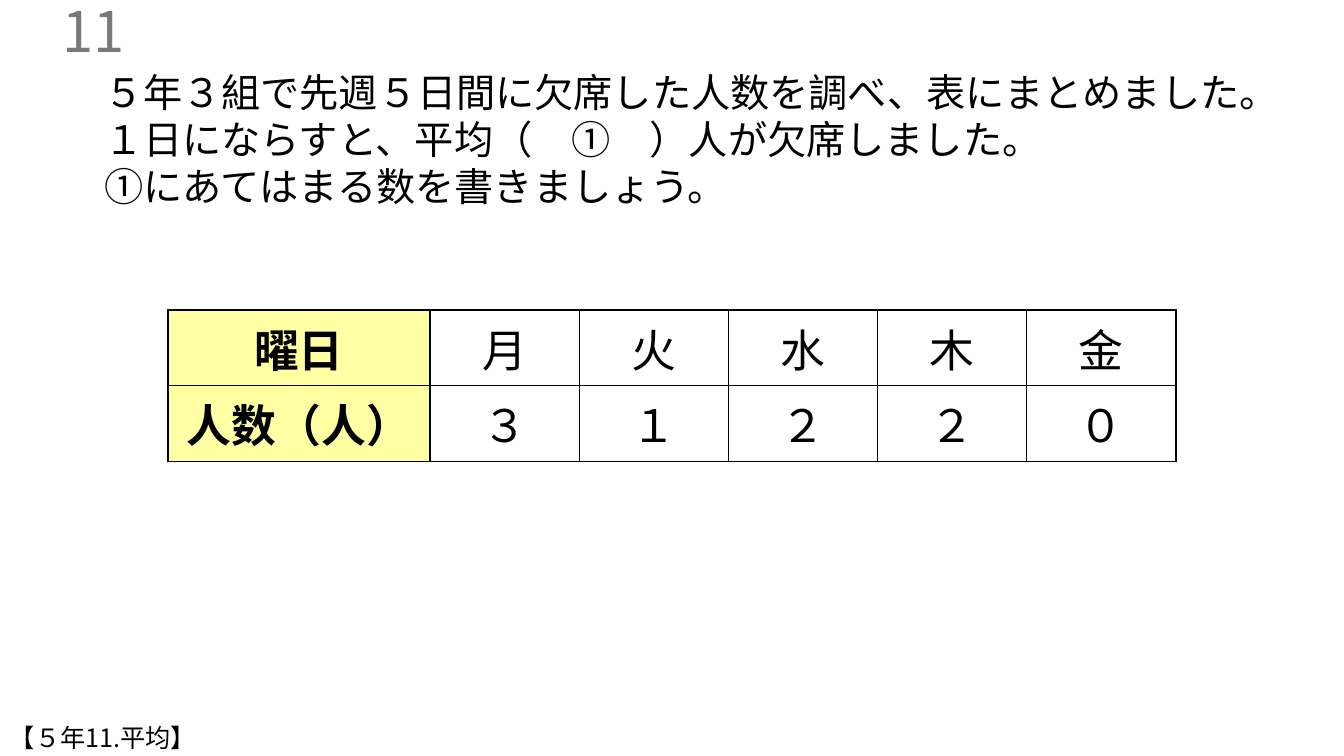
import dataclasses

import pptx
import pptx.dml.color
import pptx.enum.text
import pptx.oxml
import pptx.oxml.ns
import pptx.util

WIDTH, HEIGHT = pptx.util.Inches(13.33), pptx.util.Inches(7.5)
ALIGN = pptx.enum.text.PP_ALIGN
ANCHOR = pptx.enum.text.MSO_ANCHOR


@dataclasses.dataclass(frozen=True)
class Theme:
    font: str = "Noto Sans CJK JP"
    ink: str = "000000"
    number_ink: str = "797979"
    header_fill: str = "FFFFA3"
    cell_fill: str = "FFFFFF"
    number_size: int = 40
    table_size: int = 32
    question_size: int = 28
    footer_size: int = 18
    border: float = 1


THEME = Theme()
QUESTION = [
    "５年３組で先週５日間に欠席した人数を調べ、表にまとめました。",
    "１日にならすと、平均（　①　）人が欠席しました。",
    "①にあてはまる数を書きましょう。",
]
ABSENCES = [
    ["曜日", "月", "火", "水", "木", "金"],
    ["人数（人）", "３", "１", "２", "２", "０"],
]


def rgb(value):
    return pptx.dml.color.RGBColor.from_string(value)


def share(left, top, width, height):
    """Turn shares of the slide's size into lengths."""
    return [round(part * full) for part, full in
            zip((left, top, width, height), (WIDTH, HEIGHT) * 2)]


def apply(target, values):
    for name, value in values.items():
        setattr(target, name, value)


def write(p, text, size, color=THEME.ink, bold=False):
    r = p.add_run()
    r.text = text
    apply(r.font, {"name": THEME.font, "size": pptx.util.Pt(size), "bold": bold})
    r.font.color.rgb = rgb(color)
    ea = pptx.oxml.parse_xml(
        f'<a:ea {pptx.oxml.ns.nsdecls("a")} typeface="{THEME.font}"/>')
    r.font._element.append(ea)


def add_text(s, box, lines, size, color=THEME.ink, frame=None, paragraph=None):
    tf = s.shapes.add_textbox(*share(*box)).text_frame
    apply(tf, {"word_wrap": False, **(frame or {})})
    for i, line in enumerate(lines):
        p = tf.add_paragraph() if i else tf.paragraphs[0]
        apply(p, paragraph or {})
        write(p, line, size, color)


def set_borders(cell):
    tc_pr = cell._tc.get_or_add_tcPr()
    for i, side in enumerate(("lnL", "lnR", "lnT", "lnB")):
        tc_pr.insert(i, pptx.oxml.parse_xml(
            f'<a:{side} {pptx.oxml.ns.nsdecls("a")} '
            f'w="{pptx.util.Pt(THEME.border)}"><a:solidFill>'
            f'<a:srgbClr val="{THEME.ink}"/></a:solidFill></a:{side}>'))


def add_absence_table(s, rows, box, header_share):
    left, top, width, height = share(*box)
    table = s.shapes.add_table(len(rows), len(rows[0]),
                               left, top, width, height).table
    apply(table, {"first_row": False, "horz_banding": False})
    header = round(width * header_share)
    day = (width - header) // (len(rows[0]) - 1)
    for i, column in enumerate(table.columns):
        column.width = day if i else header
    for y, row in enumerate(rows):
        for x, text in enumerate(row):
            cell = table.cell(y, x)
            cell.vertical_anchor = ANCHOR.MIDDLE
            cell.fill.solid()
            cell.fill.fore_color.rgb = rgb(THEME.cell_fill if x else THEME.header_fill)
            set_borders(cell)
            p = cell.text_frame.paragraphs[0]
            p.alignment = ALIGN.CENTER
            write(p, text, THEME.table_size, bold=x == 0)


def main():
    prs = pptx.Presentation()
    apply(prs, {"slide_width": WIDTH, "slide_height": HEIGHT})
    s = prs.slides.add_slide(prs.slide_layouts[6])
    middle = {"vertical_anchor": ANCHOR.MIDDLE, "margin_top": 0,
              "margin_bottom": 0, "word_wrap": True}
    add_text(s, (0, 0.01, 0.1, 0.06), ["11"], THEME.number_size,
             THEME.number_ink, middle, {"alignment": ALIGN.RIGHT})
    add_absence_table(s, ABSENCES, (0.125, 0.41, 0.75, 0.2), 0.26)
    add_text(s, (0.07, 0.08, 0.88, 0.2), QUESTION, THEME.question_size,
             frame={"margin_top": pptx.util.Inches(0.08)},
             paragraph={"line_spacing": pptx.util.Pt(THEME.question_size * 1.2)})
    add_text(s, (0, 0.95, 0.56, 0.05), ["【５年11.平均】"],
             THEME.footer_size, frame=middle)
    prs.save("out.pptx")


if __name__ == "__main__":
    main()
